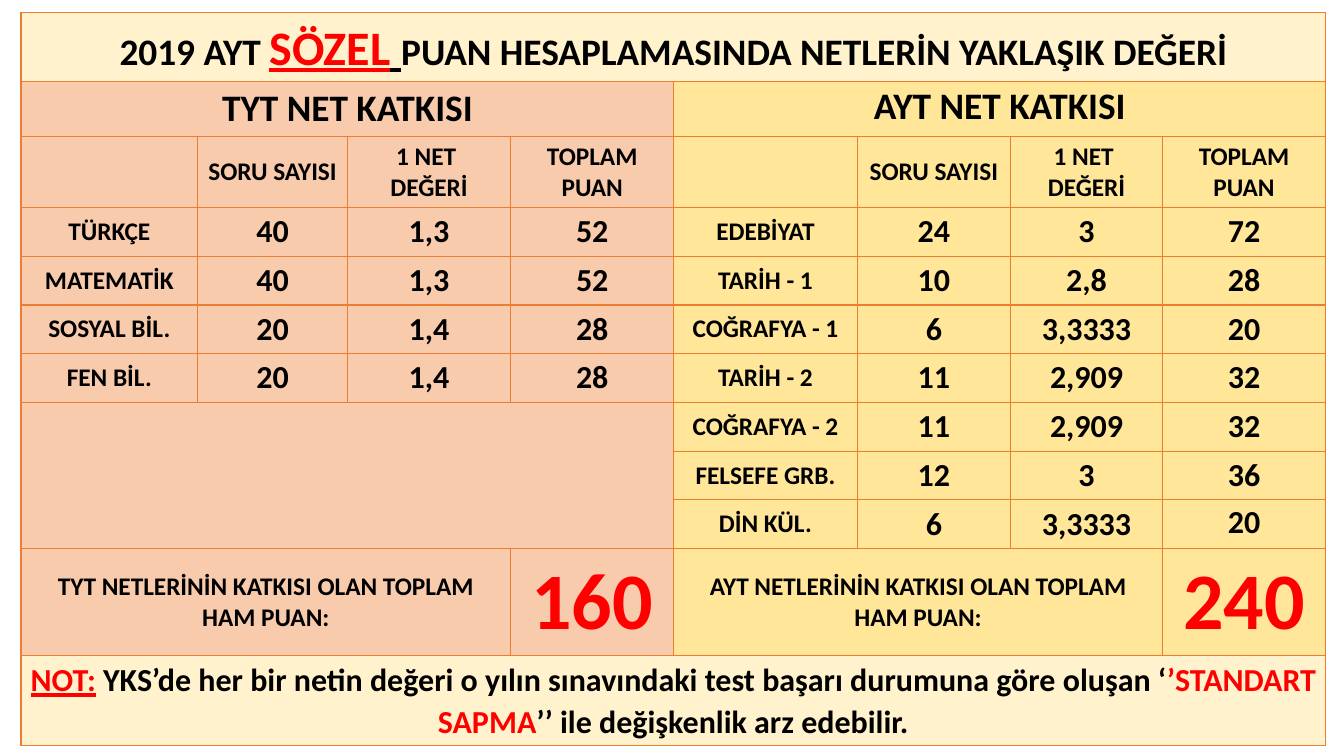
from lxml import etree
from pptx import Presentation
from pptx.dml.color import RGBColor
from pptx.enum import text
from pptx.oxml import ns
from pptx.util import Pt

COLORS = {"cream": "FFF2CC", "peach": "F8CBAD", "yellow": "FFE699",
          "border": "ED7D31", "black": "000000", "red": "FF0000"}
LABEL, HEADING, NUMBER, TOTAL = 19, 28, 24, 60


def write(cell, content, size, color="black", tight=False, top=False, spaced=False):
    """Fill a cell with plain text, or with (text, color, size, underline) runs."""
    side, edge = (4.3, 2.15) if tight else (7.2, 3.6)
    cell.margin_left = cell.margin_right = Pt(side)
    cell.margin_top = cell.margin_bottom = Pt(edge)
    cell.vertical_anchor = text.MSO_ANCHOR.TOP if top else text.MSO_ANCHOR.MIDDLE
    if isinstance(content, str):
        cell.text_frame.text = content
    else:
        for words, run_color, run_size, underline in content:
            run = cell.text_frame.paragraphs[0].add_run()
            run.text = words
            run.font.size = Pt(run_size)
            run.font.underline = underline
            run.font.color.rgb = RGBColor.from_string(COLORS[run_color])
    for paragraph in cell.text_frame.paragraphs:
        paragraph.alignment = text.PP_ALIGN.CENTER
        paragraph.font.name = "Calibri"
        paragraph.font.bold = True
        if isinstance(content, str):
            paragraph.font.size = Pt(size)
            paragraph.font.color.rgb = RGBColor.from_string(COLORS[color])
        if spaced:
            paragraph.line_spacing = 1.07
            paragraph.space_after = Pt(8)


def style(cell, fill):
    """Give a cell its fill and four borders."""
    properties = cell._tc.get_or_add_tcPr()
    for side in ("lnL", "lnR", "lnT", "lnB"):
        line = etree.SubElement(properties, ns.qn(f"a:{side}"), w=str(Pt(1)))
        line_fill = etree.SubElement(line, ns.qn("a:solidFill"))
        etree.SubElement(line_fill, ns.qn("a:srgbClr"), val=COLORS["border"])
    cell.fill.solid()
    cell.fill.fore_color.rgb = RGBColor.from_string(COLORS[fill])


column_widths = [132.5, 112.3, 122.4, 122.4, 137.5, 115.2, 113.8, 122.4]
row_heights = [46.8, 37.4, 49] + [33.1] * 7 + [76.3, 60.5]
last_row = len(row_heights) - 1
total_row = last_row - 1

presentation = Presentation()
presentation.slide_width = Pt(1008)
presentation.slide_height = Pt(566.64)
slide = presentation.slides.add_slide(presentation.slide_layouts[6])
table = slide.shapes.add_table(
    len(row_heights), len(column_widths), Pt(15.8), Pt(9.4),
    Pt(sum(column_widths)), Pt(sum(row_heights))).table
table.first_row = table.horz_banding = False
for column, width in zip(table.columns, column_widths):
    column.width = Pt(width)
for row, height in zip(table.rows, row_heights):
    row.height = Pt(height)

for r in range(len(row_heights)):
    for c in range(len(column_widths)):
        banner = r in (0, last_row)
        style(table.cell(r, c), "cream" if banner else "peach" if c < 4 else "yellow")

# Title and note span the whole table
title = [("2019 AYT ", "black", 28, False),
         ("SÖZEL", "red", 36, True),
         (" ", "black", 36, True),
         ("PUAN HESAPLAMASINDA NETLERİN YAKLAŞIK DEĞERİ", "black", 28, False)]
note = [("NOT:", "red", 24, True),
        (" YKS’de her bir netin değeri o yılın sınavındaki test başarı durumuna göre oluşan ‘",
         "black", 24, False),
        ("’STANDART SAPMA", "red", 24, False),
        ("’’ ile değişkenlik arz edebilir.", "black", 24, False)]
for r, runs in ((0, title), (last_row, note)):
    table.cell(r, 0).merge(table.cell(r, 7))
    write(table.cell(r, 0), runs, None, tight=True, top=True, spaced=True)

# Each exam fills four columns
exams = [
    ("TYT", "160", [("TÜRKÇE", "40", "1,3", "52"),
                    ("MATEMATİK", "40", "1,3", "52"),
                    ("SOSYAL BİL.", "20", "1,4", "28"),
                    ("FEN BİL.", "20", "1,4", "28")]),
    ("AYT", "240", [("EDEBİYAT", "24", "3", "72"),
                    ("TARİH - 1", "10", "2,8", "28"),
                    ("COĞRAFYA - 1", "6", "3,3333", "20"),
                    ("TARİH - 2", "11", "2,909", "32"),
                    ("COĞRAFYA - 2", "11", "2,909", "32"),
                    ("FELSEFE GRB.", "12", "3", "36"),
                    ("DİN KÜL.", "6", "3,3333", "20")]),
]
for index, (exam, total, subjects) in enumerate(exams):
    left = 4 * index
    is_ayt = exam == "AYT"
    table.cell(1, left).merge(table.cell(1, left + 3))
    write(table.cell(1, left), f"{exam} NET KATKISI", HEADING, tight=is_ayt, top=True)
    for c, header in enumerate(("SORU SAYISI", "1 NET \nDEĞERİ", "TOPLAM PUAN"), left + 1):
        write(table.cell(2, c), header, LABEL)
    for r, subject in enumerate(subjects, 3):
        for c, value in enumerate(subject):
            write(table.cell(r, left + c), value, NUMBER if c else LABEL,
                  tight=r > 6 and c > 1, top=r == 9 and c == 3)
    table.cell(total_row, left).merge(table.cell(total_row, left + 2))
    write(table.cell(total_row, left),
          f"{exam} NETLERİNİN KATKISI OLAN TOPLAM HAM PUAN:", LABEL)
    write(table.cell(total_row, left + 3), total, TOTAL, "red", top=is_ayt)

# Blank area below the shorter exam
table.cell(7, 0).merge(table.cell(9, 3))

presentation.save("out.pptx")
